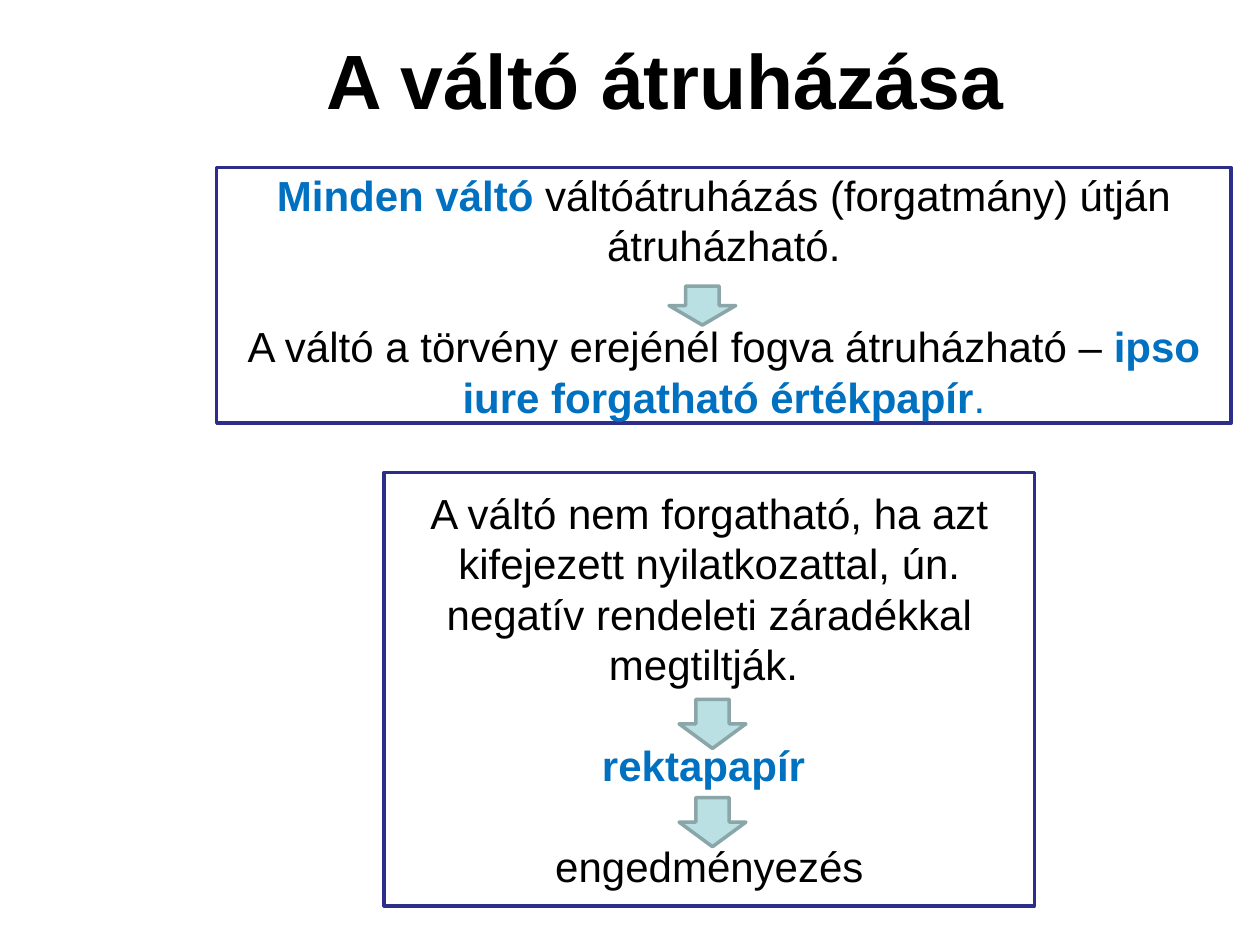
from pptx import Presentation
from pptx.dml.color import RGBColor
from pptx.enum.shapes import MSO_SHAPE
from pptx.enum.text import MSO_ANCHOR, PP_ALIGN
from pptx.util import Inches, Pt

COLORS = {"text": "000000", "accent": "0070C0", "box": "FFFFFF",
          "border": "2D2D8A", "arrow": "BBE0E3", "arrow_line": "8AA6A8"}
LINE = Pt(28.8)


def add_run(p, text, size, color, bold):
    r = p.add_run()
    r.text = text
    r.font.name = "Arial"
    r.font.size = Pt(size)
    r.font.bold = bold
    r.font.color.rgb = RGBColor.from_string(COLORS[color])


def add_shape(s, kind, at, fill, line):
    sp = s.shapes.add_shape(kind, *[Inches(v) for v in at])
    sp.shadow.inherit = False
    sp.fill.solid()
    sp.fill.fore_color.rgb = RGBColor.from_string(COLORS[fill])
    sp.line.color.rgb = RGBColor.from_string(COLORS[line])
    sp.line.width = Pt(2)
    return sp


prs = Presentation()
prs.slide_width, prs.slide_height = Inches(10), Inches(7.5)
s = prs.slides.add_slide(prs.slide_layouts[5])

title = s.shapes.title
title.left, title.top, title.width, title.height = [Inches(v) for v in (0.78, 0, 9, 1.25)]
tf = title.text_frame
tf.vertical_anchor = MSO_ANCHOR.MIDDLE
p = tf.paragraphs[0]
p.alignment = PP_ALIGN.CENTER
add_run(p, "A váltó átruházása", 44, "text", True)

boxes = [
    ((1.72, 1.33, 8.05, 2.03), [
        [("Minden váltó ", "accent", True),
         ("váltóátruházás (forgatmány) útján átruházható.", "text", False)],
        [("A váltó a törvény erejénél fogva átruházható – ", "text", False),
         ("ipso iure forgatható értékpapír", "accent", True),
         (".", "accent", False)],
    ]),
    ((3.05, 3.75, 5.16, 3.44), [
        [("A váltó nem forgatható, ha azt kifejezett nyilatkozattal, ún. "
          "negatív rendeleti záradékkal megtiltják. ", "text", False)],
        [("rektapapír ", "accent", True)],
        [("engedményezés", "text", False)],
    ]),
]
for at, paragraphs in boxes:
    tf = add_shape(s, MSO_SHAPE.RECTANGLE, at, "box", "border").text_frame
    tf.word_wrap = True
    tf.vertical_anchor = MSO_ANCHOR.MIDDLE
    for i, runs in enumerate(paragraphs):
        p = tf.add_paragraph() if i else tf.paragraphs[0]
        p.alignment = PP_ALIGN.CENTER
        p.line_spacing = LINE
        p.space_before = LINE if i else Pt(0)
        for text, color, bold in runs:
            add_run(p, text, 24, color, bold)

for left, top, height in [(5.31, 2.27, 0.31), (5.39, 5.55, 0.39), (5.39, 6.33, 0.39)]:
    add_shape(s, MSO_SHAPE.DOWN_ARROW, (left, top, 0.53, height), "arrow", "arrow_line")

prs.save("out.pptx")
